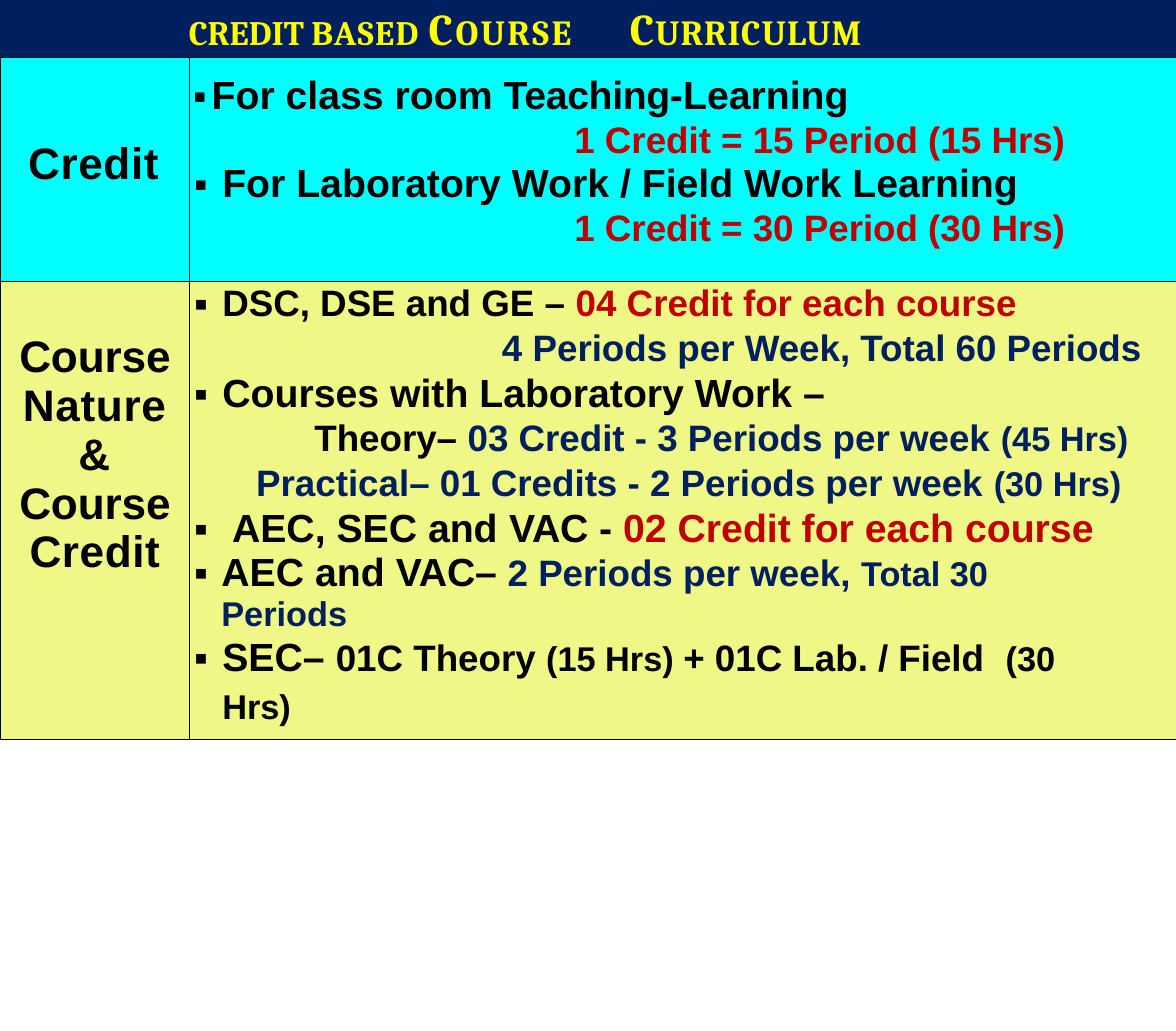
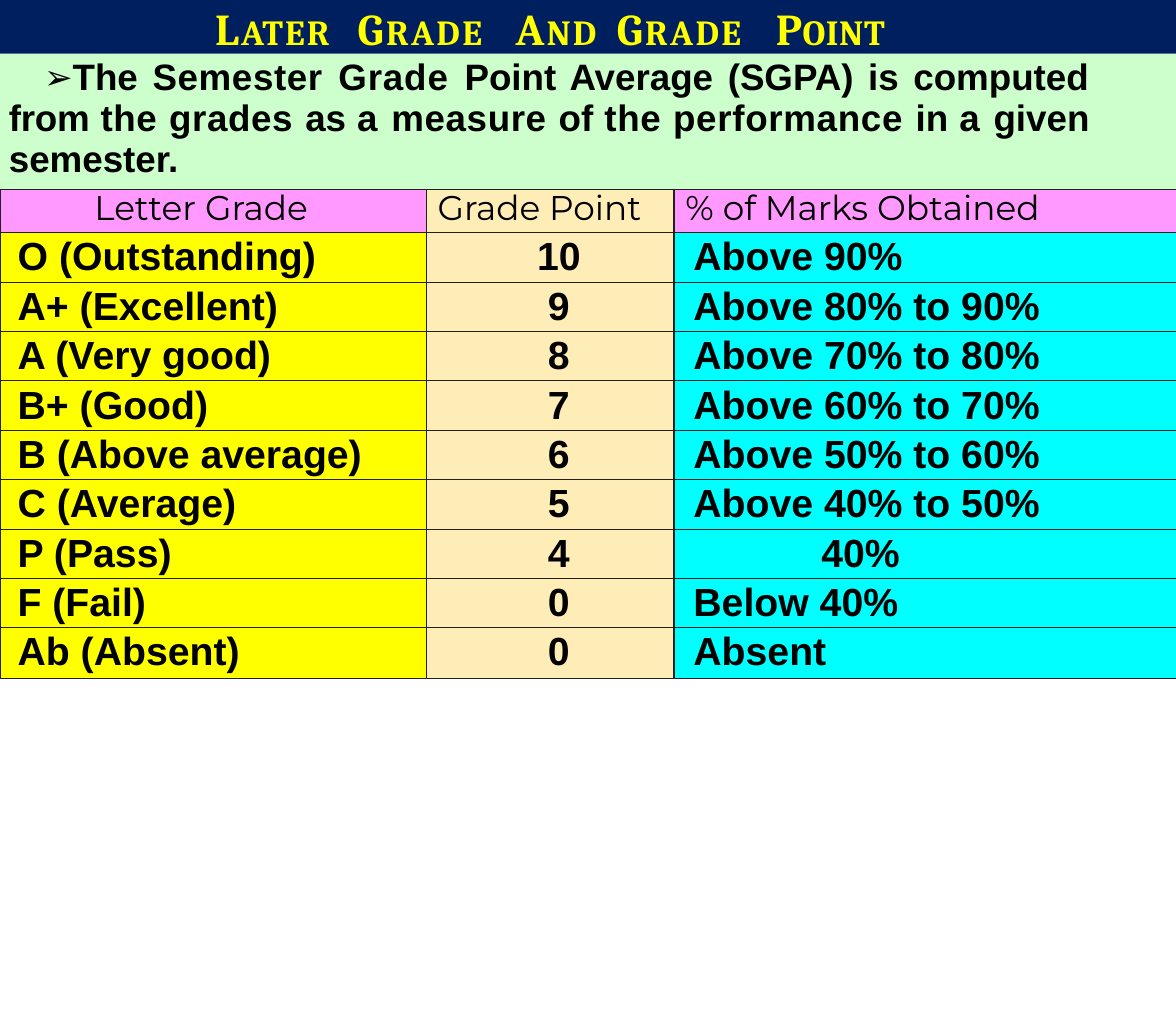
from lxml import etree
from pptx import Presentation
from pptx.dml.color import RGBColor
from pptx.enum.shapes import MSO_SHAPE
from pptx.enum.text import PP_ALIGN
from pptx.oxml.ns import qn
from pptx.util import Emu, Pt

RECT = MSO_SHAPE.RECTANGLE
CENTER, RIGHT, JUSTIFY = PP_ALIGN.CENTER, PP_ALIGN.RIGHT, PP_ALIGN.JUSTIFY
PX = 9144
WIDTH, HEIGHT = 1333, 1169
COLORS = {
    "navy": "001F5F", "yellow": "FFFF00", "black": "000000", "red": "C00000",
    "cyan": "00FFFF", "lime": "EFF887", "mint": "CCFFCC", "pink": "FF99FF",
    "cream": "FFEDB7", "ink": "211F1F",
}


def px(n):
    """Turn px into EMU."""
    return Emu(n * PX)


def rgb(name):
    """Look up a named colour."""
    return RGBColor.from_string(COLORS[name])


class Deck:
    """Hold the shared style and the current slide."""

    def __init__(self):
        """Start an empty presentation."""
        self.prs = Presentation()
        self.prs.slide_width, self.prs.slide_height = px(WIDTH), px(HEIGHT)

    def slide(self, band, left, runs, tabs=()):
        """Add a slide with its title band and title."""
        self.s = self.prs.slides.add_slide(self.prs.slide_layouts[6])
        sp = self.s.shapes.add_shape(RECT, 0, 0, px(WIDTH), px(band))
        sp.shadow.inherit = False
        sp.fill.solid()
        sp.fill.fore_color.rgb = rgb("navy")
        sp.line.fill.background()
        tf = self.s.shapes.add_textbox(px(left), px(1), px(908), px(63)).text_frame
        tf.word_wrap = True
        tf.margin_left = tf.margin_right = tf.margin_bottom = 0
        tf.margin_top = px(1)
        self.para(tf.paragraphs[0], runs, left=1, tabs=tabs, font="Cambria")

    def run(self, p, font, bold, text, size, color="black", spc=0, small=False):
        """Add one run."""
        r = p.add_run()
        r.text = text
        r.font.name, r.font.size, r.font.bold = font, Pt(size), bold
        r.font.color.rgb = rgb(color)
        rpr = r.font._element
        if spc:
            rpr.set("spc", str(round(spc * 100)))
        if small:
            rpr.set("cap", "small")

    def para(self, p, runs, left=0, indent=0, right=0, align=None, line=None,
             before=0, bullet=None, size=100, tabs=(), font="Arial", bold=True):
        """Fill a paragraph."""
        p.alignment = align
        p.space_before = Pt(before)
        if line:
            p.line_spacing = line if line < 2 else Pt(line)
        ppr = p._p.get_or_add_pPr()
        for name, value in (("marL", left), ("marR", right), ("indent", indent)):
            ppr.set(name, str(px(value)))
        if bullet:
            etree.SubElement(ppr, qn("a:buSzPct"), val=str(size * 1000))
            etree.SubElement(ppr, qn("a:buFont"), typeface="Arial")
            etree.SubElement(ppr, qn("a:buChar"), char=bullet)
        if tabs:
            stops = etree.SubElement(ppr, qn("a:tabLst"))
            for stop in tabs:
                etree.SubElement(stops, qn("a:tab"), pos=str(px(stop)), algn="l")
        for item in runs:
            self.run(p, font, bold, *item)

    def table(self, top, cols, rows):
        """Add an unstyled table."""
        table = self.s.shapes.add_table(
            len(rows), len(cols), 0, px(top), px(sum(cols)), px(sum(rows))).table
        table.first_row = table.horz_banding = False
        for column, width in zip(table.columns, cols):
            column.width = px(width)
        for row, height in zip(table.rows, rows):
            row.height = px(height)
        return table

    def cell(self, cell, fill, paras, top=0, line="black", sides="LRTB"):
        """Fill a cell with paragraphs and draw its borders."""
        cell.margin_left = cell.margin_right = cell.margin_bottom = 0
        cell.margin_top = px(top)
        cell.fill.solid()
        cell.fill.fore_color.rgb = rgb(fill)
        tcpr = cell._tc.get_or_add_tcPr()
        for i, side in enumerate("LRTB"):
            ln = etree.Element(qn("a:ln" + side), w="12700")
            if side in sides:
                solid = etree.SubElement(ln, qn("a:solidFill"))
                etree.SubElement(solid, qn("a:srgbClr"), val=COLORS[line])
            else:
                etree.SubElement(ln, qn("a:noFill"))
            tcpr.insert(i, ln)
        tf = cell.text_frame
        for i, (runs, style) in enumerate(paras):
            p = tf.add_paragraph() if i else tf.paragraphs[0]
            self.para(p, runs, **style)


def item(left=37, hang=32, **style):
    """Return the style of a bulleted paragraph."""
    return dict(left=left, indent=-hang, bullet="▪", tabs=(left,), **style)


def credit_slide(deck):
    """Build the credit table."""
    deck.slide(71, 213, [
        ("CREDIT ", 28, "yellow"), ("BASED ", 28, "yellow", 1.1),
        ("C", 36, "yellow", 2), ("ourse\t", 36, "yellow", 2, True),
        ("C", 36, "yellow", 0.8), ("urriculum", 36, "yellow", 0.8, True),
    ], tabs=(572,))
    table = deck.table(65, (215, 1119), (254, 519))
    equation = dict(left=436, before=2)
    deck.cell(table.cell(0, 0), "cyan",
              [([("Credit", 36, "black", 0.5)], dict(left=32))], top=93)
    deck.cell(table.cell(0, 1), "cyan", [
        ([("For class room", 32), (" Teaching-", 32, "black", -0.3), ("Learning", 32)],
         item(25, 21, size=97)),
        ([("1 Credit = 15 Period (15 Hrs)", 30, "red")], equation),
        ([("For Laboratory Work / Field Work Learning", 32)], item(size=97, before=0.5)),
        ([("1 Credit = 30 Period (30 Hrs)", 30, "red")], equation),
    ], top=19)
    words = (("Course ", -0.1), ("Nature ", 0.6), ("& ", 0.8), ("Course ", -0.1), ("Credit", 0.5))
    deck.cell(table.cell(1, 0), "lime", [
        ([(word, 36, "black", spc) for word, spc in words],
         dict(left=20, right=20, align=CENTER, line=0.99)),
    ], top=59)
    deck.cell(table.cell(1, 1), "lime", [
        ([("DSC, DSE and GE – ", 30), ("04 Credit for each course", 30, "red")],
         item(size=107)),
        ([("4 Periods per Week, Total 60 Periods", 30, "navy")],
         dict(left=354, line=36, before=0.5)),
        ([("Courses with Laboratory Work –", 32)], item(line=38.4)),
        ([("Theory– ", 30), ("03 Credit - 3 Periods per week ", 30, "navy"),
          ("(45 Hrs)", 28, "navy")], dict(right=55, align=RIGHT, before=2)),
        ([("Practical– 01 Credits - 2 Periods per week ", 30, "navy"),
          ("(30 Hrs)", 28, "navy")], dict(right=63, align=RIGHT, line=36, before=0.5)),
        ([("AEC, SEC and ", 32), ("VAC ", 32, "black", -0.2), ("- ", 32),
          ("02 Credit for each course", 32, "red")], item(48, 43, line=38.4)),
        ([("AEC and ", 32), ("VAC– ", 32, "black", -0.2),
          ("2 Periods per week, ", 30, "navy"), ("Total 30 Periods", 28, "navy")],
         item(36, 31, right=80)),
        ([("SEC– ", 32), ("01C Theory ", 30), ("(15 Hrs) ", 28),
          ("+ 01C Lab. / Field\t", 30), ("(30 Hrs)", 28)],
         {**item(line=38.2, right=70), "tabs": (37, 925)}),
    ], top=2)


def grade_slide(deck):
    """Build the grade table."""
    title = []
    for word, spc, gap in (("Later", 1.6, 9), ("Grade", 2, 11), ("And", 1.8, 5),
                           ("Grade", 2, 12), ("Point", 0.5, 0)):
        title += [(word[0], 36, "yellow", spc), (word[1:], 36, "yellow", spc, True)]
        if gap:
            title.append((" ", 28, "yellow", gap))
    deck.slide(61, 243, title)
    grades = (
        ("O (Outstanding)", "10", "Above 90%"),
        ("A+ (Excellent)", "9", "Above 80% to 90%"),
        ("A (Very good)", "8", "Above 70% to 80%"),
        ("B+ (Good)", "7", "Above 60% to 70%"),
        ("B (Above average)", "6", "Above 50% to 60%"),
        ("C (Average)", "5", "Above 40% to 50%"),
        ("P (Pass)", "4", "40%"),
        ("F (Fail)", "0", "Below 40%"),
        ("Ab (Absent)", "0", "Absent"),
    )
    table = deck.table(61, (483, 281, 570), (153, 49) + (56,) * 8 + (58,))
    table.cell(0, 0).merge(table.cell(0, 2))
    sgpa = (("The ", 0), ("Semester ", 0.5), ("Grade ", 0.7),
            ("Point Average (SGPA) is computed ", 0), ("from ", -0.2),
            ("the grades ", 0.5), ("as ", 0), ("a ", 1.1), ("measure ", 0.5),
            ("of ", 0), ("the ", 0.5), ("performance ", 0.6), ("in ", 0),
            ("a ", 1.1), ("given semester.", 0))
    deck.cell(table.cell(0, 0), "mint", [
        ([(text, 30, "black", spc) for text, spc in sgpa],
         dict(left=10, indent=40, right=99, align=JUSTIFY, bullet="➢", size=93, tabs=(50,))),
    ], top=4, line="ink", sides="B")
    headers = (("Letter Grade", "pink", 107), ("Grade Point", "cream", 13),
               ("% of Marks Obtained", "pink", 13))
    for j, (text, fill, left) in enumerate(headers):
        style = dict(left=left, line=32, font="Montserrat", bold=False)
        deck.cell(table.cell(1, j), fill, [([(text, 28)], style)], line="ink")
    columns = (("yellow", 20, None), ("cream", 20, CENTER), ("cyan", 22, None))
    for i, grade in enumerate(grades, 2):
        for j, (text, (fill, left, align)) in enumerate(zip(grade, columns)):
            style = dict(left=167 if text == "40%" else left, align=align, line=38)
            deck.cell(table.cell(i, j), fill, [([(text, 32)], style)], line="ink")


def main():
    """Build and save the deck."""
    deck = Deck()
    credit_slide(deck)
    grade_slide(deck)
    deck.prs.save("out.pptx")


if __name__ == "__main__":
    main()
